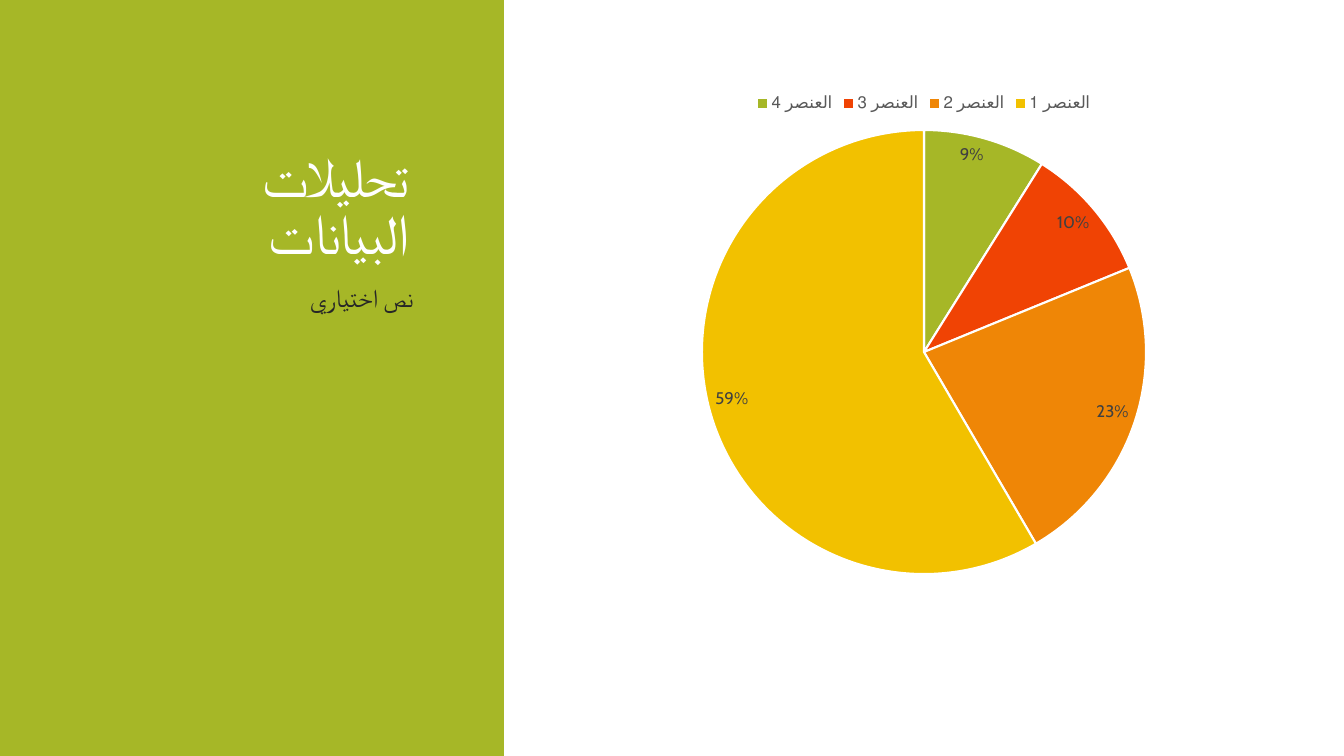
from copy import deepcopy

from pptx import Presentation
from pptx.chart.data import CategoryChartData as ChartData
from pptx.dml.color import RGBColor as Rgb
from pptx.enum.chart import XL_CHART_TYPE as Kind
from pptx.enum.chart import XL_LABEL_POSITION as Spot
from pptx.enum.chart import XL_LEGEND_POSITION as Side
from pptx.enum.shapes import MSO_SHAPE as Form
from pptx.enum.text import MSO_ANCHOR as Anchor
from pptx.enum.text import MSO_AUTO_SIZE as Fit
from pptx.enum.text import PP_ALIGN as Align
from pptx.oxml.ns import qn
from pptx.util import Pt

FONT = "Cabin"
HUES = {
    "white": "FFFFFF",
    "ink": "262626",
    "label": "404040",
    "key": "595959",
    "green": "A6B727",
    "red": "F04304",
    "orange": "EF8606",
    "yellow": "F2C100",
}
PARTS = [
    ("العنصر 4", 9, "green"),
    ("العنصر 3", 10, "red"),
    ("العنصر 2", 23, "orange"),
    ("العنصر 1", 59, "yellow"),
]


def tint(name):
    """Return the colour for a name."""
    return Rgb.from_string(HUES[name])


def style(font, size, hue):
    """Set face, size and colour of a font."""
    font.name = FONT
    font.size = Pt(size)
    font.color.rgb = tint(hue)


def place(shape, left, top, width, height):
    """Move and size a shape, in points."""
    shape.left, shape.top = Pt(left), Pt(top)
    shape.width, shape.height = Pt(width), Pt(height)


def write(shape, text, size=18, hue="ink", anchor=Anchor.TOP,
          lead=None, before=0, track=0):
    """Fill a shape with one right-to-left paragraph."""
    frame = shape.text_frame
    frame.word_wrap = True
    frame.auto_size = Fit.NONE
    frame.vertical_anchor = anchor
    para = frame.paragraphs[0]
    para.text = text
    para.alignment = Align.RIGHT
    para.line_spacing = lead
    para.space_before = Pt(before)
    para._p.get_or_add_pPr().set("rtl", "1")
    for run in para.runs:
        style(run.font, size, hue)
        run._r.get_or_add_rPr().set("spc", str(round(track * 100)))
    for gap in para._p.findall(qn("a:br")):
        gap.insert(0, deepcopy(para.runs[0]._r.rPr))


def panel(slide):
    """Draw the green side panel."""
    side = slide.shapes.add_shape(Form.RECTANGLE, 0, 0, Pt(360), Pt(540))
    side.shadow.inherit = False
    side.fill.solid()
    side.fill.fore_color.rgb = tint("green")
    side.line.fill.background()
    tree = slide.shapes._spTree
    tree.remove(side._element)
    tree.insert(2, side._element)


def pie(slide):
    """Add the pie chart with its legend and labels."""
    data = ChartData()
    data.categories = [name for name, _, _ in PARTS]
    data.add_series("Series 1", [share for _, share, _ in PARTS])
    chart = slide.shapes.add_chart(
        Kind.PIE, Pt(420), Pt(60), Pt(480), Pt(360), data).chart
    chart.font.name = FONT
    chart.font.size = Pt(10)
    chart.has_title = False
    chart.has_legend = True
    chart.legend.position = Side.TOP
    chart.legend.include_in_layout = False
    style(chart.legend.font, 12, "key")

    plot = chart.plots[0]
    plot.vary_by_categories = True
    plot.has_data_labels = True
    labels = plot.data_labels
    labels.show_value = True
    labels.number_format = '0"%"'
    labels.number_format_is_linked = False
    labels.position = Spot.INSIDE_END
    style(labels.font, 12, "label")
    for i, (_, _, hue) in enumerate(PARTS):
        look = plot.series[0].points[i].format
        look.fill.solid()
        look.fill.fore_color.rgb = tint(hue)
        look.line.color.rgb = tint("white")
        look.line.width = Pt(1.5)


def main():
    """Build and save the slide."""
    deck = Presentation()
    deck.slide_width, deck.slide_height = Pt(960), Pt(540)
    slide = deck.slides.add_slide(deck.slide_layouts[5])
    panel(slide)
    title = slide.shapes.title
    place(title, 33, 42.5, 266.5, 151)
    write(title, "تحليلات\vالبيانات", size=40, hue="white",
          anchor=Anchor.BOTTOM, lead=0.85, track=-1.2)
    note = slide.shapes.add_textbox(Pt(34.5), Pt(198), Pt(268), Pt(246))
    write(note, "نص اختياري", before=12)
    pie(slide)
    deck.save("out.pptx")


if __name__ == "__main__":
    main()
